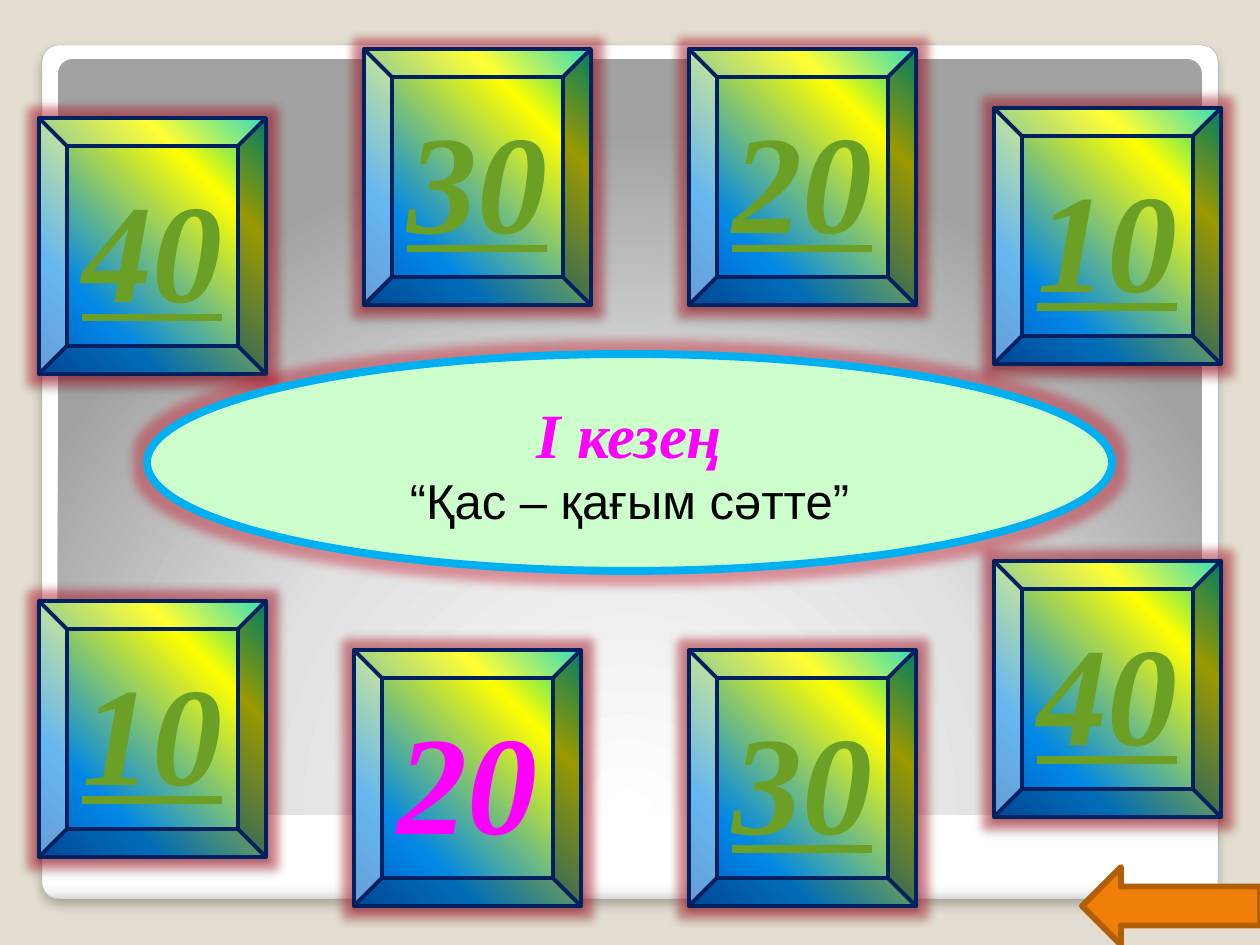
from dataclasses import dataclass

from lxml.etree import SubElement
from pptx import Presentation
from pptx.dml.color import RGBColor
from pptx.enum.shapes import MSO_SHAPE
from pptx.enum.text import MSO_ANCHOR, PP_ALIGN
from pptx.oxml import parse_xml
from pptx.oxml.ns import nsdecls, qn
from pptx.util import Emu, Pt


@dataclass(frozen=True)
class Theme:
    """Colours, gradients, fonts and type sizes of the slide."""
    back: str = "E3DED1"
    edge: str = "A4A4A4"
    navy: str = "002060"
    link: str = "6B9F25"
    pink: str = "FF00FF"
    mint: str = "CCFFCC"
    sky: str = "00B0F0"
    ink: str = "000000"
    glow: str = "C00A1E"
    arrow: str = "F07F09"
    rim: str = "B25E07"
    frame: tuple = ((0, "FFFFFF"), (98, "FFFFFF"), (99, "F7F7F7"), (100, "DADADA"))
    panel: tuple = ((0, "FFFFFF"), (55, "E1E1E1"), (100, "A2A2A2"))
    tile: tuple = ((0, "03D4A8"), (25, "FFFF00"), (75, "0087E6"), (100, "005CBF"))
    serif: str = "Times New Roman"
    sans: str = "Arial"
    score: int = 80
    title: int = 36
    sub: int = 28


THEME = Theme()
TILE = (227, 256)
TILES = (
    (39, 118, "40"), (354, 650, "20"), (994, 108, "10"), (689, 49, "20"),
    (364, 49, "30"), (689, 650, "30"), (39, 601, "10"), (994, 561, "40"),
)


def px(num):
    """Turn pixels into EMU."""
    return Emu(round(num * 914400 / 126))


def rgb(code):
    """Turn a hex code into a colour."""
    return RGBColor.from_string(code)


def shape(slide, kind, box, fill=None, line=None, width=0):
    """Add a preset shape without shadow, with an optional fill and line."""
    item = slide.shapes.add_shape(kind, *map(px, box))
    item.shadow.inherit = False
    if fill:
        item.fill.solid()
        item.fill.fore_color.rgb = rgb(fill)
    if line:
        item.line.color.rgb = rgb(line)
        item.line.width = Pt(width)
    else:
        item.line.fill.background()
    return item


def blend(item, stops, way):
    """Fill a shape with gradient stops running the given way."""
    marks = "".join(
        f'<a:gs pos="{pos * 1000}"><a:srgbClr val="{code}"/></a:gs>'
        for pos, code in stops)
    grad = parse_xml(
        f'<a:gradFill {nsdecls("a")} rotWithShape="1">'
        f'<a:gsLst>{marks}</a:gsLst>{way}</a:gradFill>')
    item._element.spPr.find(qn("a:prstGeom")).addnext(grad)


def linear(angle):
    """Give the XML of a straight gradient direction."""
    return f'<a:lin ang="{angle * 60000}" scaled="0"/>'


def effect(item, tag, code, alpha, **sizes):
    """Add a glow or shadow to a shape."""
    group = item._element.spPr.find(qn("a:effectLst"))
    node = SubElement(group, qn(tag), {key: str(val) for key, val in sizes.items()})
    tint = SubElement(node, qn("a:srgbClr"), val=code)
    SubElement(tint, qn("a:alpha"), val=str(alpha * 1000))


def shade(item, alpha, blur, dist):
    """Add a shadow that falls straight down."""
    effect(item, "a:outerShdw", THEME.ink, alpha, blurRad=Pt(blur),
           dist=Pt(dist), dir=5400000, rotWithShape=0)


def halo(item):
    """Add the red glow."""
    effect(item, "a:glow", THEME.glow, 40, rad=Pt(11))


def write(para, text, face, size, code, strong=False, under=False):
    """Write one centred paragraph."""
    para.text = text
    para.alignment = PP_ALIGN.CENTER
    font = para.font
    font.name, font.size = face, Pt(size)
    font.color.rgb = rgb(code)
    font.bold = font.italic = strong
    font.underline = under


def frame(slide, box):
    """Draw the white frame and the grey panel inside it."""
    left, top, wide, high = box
    outer = shape(slide, MSO_SHAPE.ROUNDED_RECTANGLE, box,
                  line=THEME.edge, width=0.16)
    blend(outer, THEME.frame, linear(90))
    shade(outer, 25, 6, 4)
    inner = shape(slide, MSO_SHAPE.ROUNDED_RECTANGLE,
                  (left + 16, top + 14, wide - 32, high - 98))
    blend(inner, THEME.panel,
          '<a:path path="circle"><a:fillToRect l="50000" t="175000" '
          'r="50000" b="-75000"/></a:path>')
    for item in (outer, inner):
        item.adjustments[0] = 0.02


def tile(slide, box, text, fresh):
    """Draw a score tile, underlined in green when fresh and pink when not."""
    item = shape(slide, MSO_SHAPE.BEVEL, box, line=THEME.navy, width=2.25)
    blend(item, THEME.tile, linear(135))
    halo(item)
    shade(item, 35, 3.1, 1.8)
    item.text_frame.vertical_anchor = MSO_ANCHOR.MIDDLE
    write(item.text_frame.paragraphs[0], text, THEME.serif, THEME.score,
          THEME.link if fresh else THEME.pink, True, fresh)


def banner(slide, box):
    """Draw the oval with the name of the round."""
    item = shape(slide, MSO_SHAPE.OVAL, box, THEME.mint, THEME.sky, 4.5)
    halo(item)
    body = item.text_frame
    body.vertical_anchor = MSO_ANCHOR.MIDDLE
    write(body.paragraphs[0], "І кезең", THEME.serif, THEME.title, THEME.pink, True)
    write(body.add_paragraph(), "“Қас – қағым сәтте”", THEME.sans, THEME.sub, THEME.ink)


def main():
    """Build and save the slide."""
    deck = Presentation()
    deck.slide_width, deck.slide_height = px(1260), px(945)
    slide = deck.slides.add_slide(deck.slide_layouts[6])
    slide.background.fill.solid()
    slide.background.fill.fore_color.rgb = rgb(THEME.back)
    frame(slide, (42, 45, 1176, 854))
    for spot, (left, top, text) in enumerate(TILES):
        tile(slide, (left, top, *TILE), text, spot != 1)
    banner(slide, (147, 354, 965, 217))
    shape(slide, MSO_SHAPE.LEFT_ARROW, (1082, 867, 178, 78),
          THEME.arrow, THEME.rim, 3.35)
    deck.save("out.pptx")


if __name__ == "__main__":
    main()
